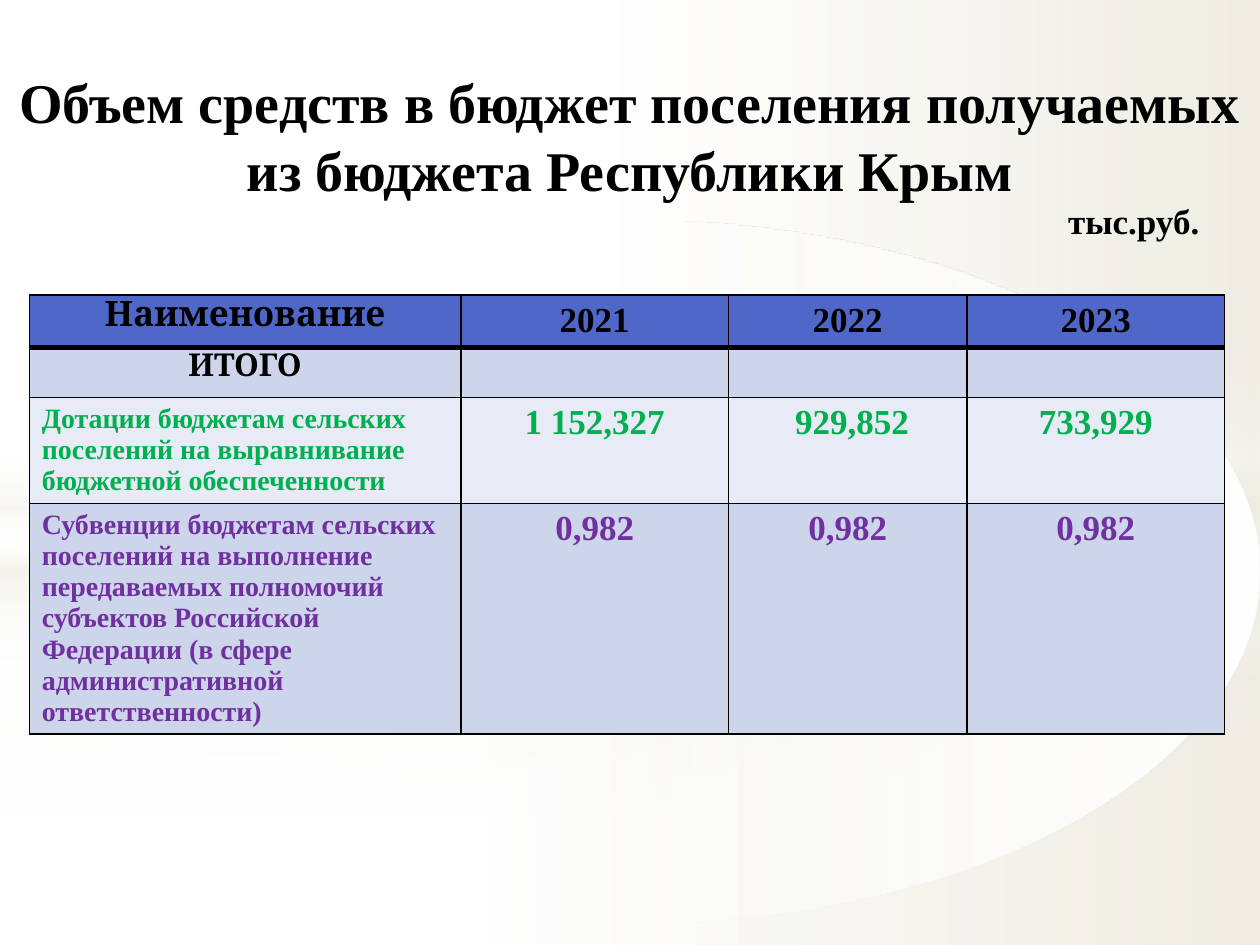
from lxml import etree
from pptx import Presentation
from pptx.dml.color import RGBColor
from pptx.enum.shapes import MSO_SHAPE
from pptx.enum.text import MSO_ANCHOR, PP_ALIGN
from pptx.oxml import parse_xml
from pptx.oxml.ns import nsdecls, qn
from pptx.util import Cm, Pt

HEX = {"white": "FFFFFF", "sand": "EEECE1", "ink": "000000", "head": "4E67C8",
       "dark": "CCD5EA", "pale": "E7EBF5", "green": "00B050", "plum": "7030A0"}
SERIF, CAPS = "Times New Roman", "Cambria"
WIDE, HIGH = 25.4, 19.05
GLOW = [(0, "white", 0), (29, "white", 30), (45, "sand", 40),
        (55, "white", 26), (65, "sand", 60), (100, "white", 0)]


def shade(slide, kind, box, stops, angle):
    """Add a borderless shape with a partly clear gradient."""
    shape = slide.shapes.add_shape(kind, *map(Cm, box))
    shape.shadow.inherit = False
    shape.line.fill.background()
    marks = "".join(
        f'<a:gs pos="{pos * 1000}"><a:srgbClr val="{HEX[name]}">'
        f'<a:alpha val="{alpha * 1000}"/></a:srgbClr></a:gs>'
        for pos, name, alpha in stops)
    grad = parse_xml(f'<a:gradFill {nsdecls("a")} rotWithShape="1"><a:gsLst>{marks}'
                     f'</a:gsLst><a:lin ang="{angle * 60000}" scaled="0"/></a:gradFill>')
    shape.fill.background()
    props = shape.fill._xPr
    props.replace(props.find(qn("a:noFill")), grad)


def veil(slide, box, sky, band, tint, core):
    """Lay ground, sky, glowing band and ellipse; sky is the horizon height."""
    left, top, wide, high = box
    rect = MSO_SHAPE.RECTANGLE
    low, mid, end = tint
    shade(slide, rect, (left, top + sky, wide, high - sky),
          [(0, "white", low + 2), (37, "white", mid + 14), (100, "sand", end)], 0)
    shade(slide, rect, (left, top, wide, sky),
          [(0, "white", low), (48, "white", mid), (100, "sand", end)], 0)
    shade(slide, rect, (left, top + band, wide, 6.35), GLOW, 90)
    shade(slide, MSO_SHAPE.OVAL, (left, top + 4.45, wide, 14.17),
          [(0, "white", 100), (core, "white", 0)], 180)


def style(para, text, align, **look):
    """Write one run and give it its format."""
    para.alignment = align
    run = para.add_run()
    run.text = text
    look = {"bold": True, "name": SERIF, **look}
    run.font.color.rgb = RGBColor.from_string(HEX[look.pop("color", "ink")])
    for key, value in look.items():
        setattr(run.font, key, value)


def label(slide, box, text, align, size):
    """Add a wrapped line of text."""
    frame = slide.shapes.add_textbox(*map(Cm, box)).text_frame
    frame.word_wrap = True
    frame.vertical_anchor = MSO_ANCHOR.MIDDLE
    style(frame.paragraphs[0], text, align, size=Pt(size))


def title(slide, box):
    """Place the heading and, under it at the right, the unit."""
    left, top, wide, high = box
    label(slide, (left, top, wide, high),
          "Объем средств в бюджет поселения получаемых из бюджета Республики Крым",
          PP_ALIGN.CENTER, 32)
    label(slide, (left + wide - 6, top + high - 0.25, 5.03, 1),
          "тыс.руб.", PP_ALIGN.RIGHT, 20)


def border(cell, widths):
    """Draw the left, right, top and bottom edges of a cell."""
    props = cell._tc.get_or_add_tcPr()
    for spot, (side, width) in enumerate(zip("LRTB", widths)):
        line = etree.Element(qn(f"a:ln{side}"), w=str(Pt(width)))
        fill = etree.SubElement(line, qn("a:solidFill"))
        etree.SubElement(fill, qn("a:srgbClr"), val=HEX["ink"])
        props.insert(spot, line)


def budget(slide, box):
    """Place the table of funds by year."""
    # texts, fill, text colour, first column font and size
    rows = [
        (["Наименование", "2021", "2022", "2023"], "head", "ink", CAPS, 20),
        (["ИТОГО", "", "", ""], "dark", "ink", CAPS, 18),
        (["Дотации бюджетам сельских поселений на выравнивание бюджетной "
          "обеспеченности", "1 152,327", " 929,852", "733,929"],
         "pale", "green", SERIF, 16),
        (["Субвенции бюджетам сельских поселений на выполнение передаваемых "
          "полномочий субъектов Российской Федерации (в сфере административной "
          "ответственности)", "0,982", "0,982", "0,982"],
         "dark", "plum", SERIF, 16),
    ]
    grid = slide.shapes.add_table(len(rows), 4, *map(Cm, box)).table
    for col, width in zip(grid.columns, (8.7, 5.4, 4.8, 5.2)):
        col.width = Cm(width)
    for row, height in zip(grid.rows, (1.06, 1, 2.13, 4.65)):
        row.height = Cm(height)
    for r, (texts, fill, color, face, size) in enumerate(rows):
        for c, text in enumerate(texts):
            cell = grid.cell(r, c)
            cell.fill.solid()
            cell.fill.fore_color.rgb = RGBColor.from_string(HEX[fill])
            border(cell, (1, 1, 3 if r == 1 else 1, 3 if r == 0 else 1))
            if r == 1 or (r, c) == (0, 0):
                cell.margin_top = cell.margin_bottom = 0
            if text:
                style(cell.text_frame.paragraphs[0], text,
                      PP_ALIGN.LEFT if c == 0 and r > 1 else PP_ALIGN.CENTER,
                      color=color, name=SERIF if c else face,
                      size=Pt(20 if c else size))


def main():
    deck = Presentation()
    deck.slide_width, deck.slide_height = Cm(WIDE), Cm(HIGH)
    slide = deck.slides.add_slide(deck.slide_layouts[6])
    slide.background.fill.solid()
    slide.background.fill.fore_color.rgb = RGBColor.from_string(HEX["white"])
    page = (0, 0, WIDE, HIGH)
    # Backdrop in two coats
    veil(slide, page, 14.17, 10.46, (89, 62, 79), 56)
    veil(slide, page, 10.74, 7.37, (90, 63, 80), 54)
    # Table, then heading
    budget(slide, (0.59, 5.95, 24.1, 8.84))
    title(slide, (0, 1.25, WIDE, 2.95))
    deck.save("out.pptx")


if __name__ == "__main__":
    main()
